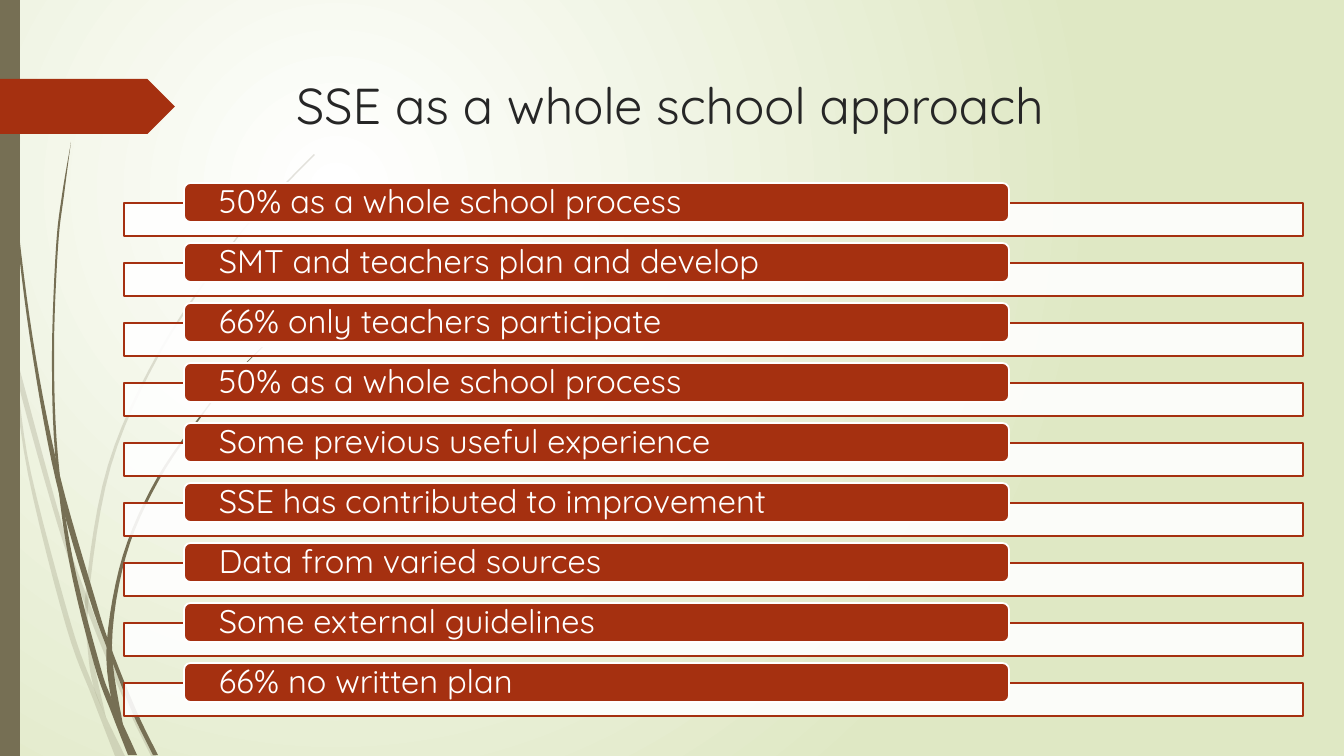
import pptx
import pptx.util
import pptx.dml.color
import pptx.enum.shapes
import pptx.enum.text
import pptx.oxml.ns
import lxml.etree

SCALE = 914400 / 100.8
WIDE, HIGH = 1344, 756
FONT = "Quicksand"
RED, BROWN, WHITE, DARK = "A53010", "766F54", "FFFFFF", "262626"
KIND = pptx.enum.shapes.MSO_SHAPE
ANCHOR = pptx.enum.text.MSO_ANCHOR
ALIGN = pptx.enum.text.PP_ALIGN

ITEMS = [
    "50% as a whole school process",
    "SMT and teachers plan and develop",
    "66% only teachers participate",
    "50% as a whole school process",
    "Some previous useful experience",
    "SSE has contributed to improvement",
    "Data from varied sources",
    "Some external guidelines",
    "66% no written plan",
]

PALE_STEMS = [
    ([(0, 284), (9, 325), (17, 379), (31, 473), (71, 624), (94, 688), (106, 717), (125, 756)],
     [(0, 301), (10, 347), (28, 474), (66, 626), (93, 699), (115, 756)]),
    ([(14, 348), (62, 524), (93, 612), (128, 698), (156, 756)],
     [(14, 348), (17, 379), (58, 526), (89, 615), (124, 700), (151, 756)]),
    ([(314, 154), (270, 199), (230, 246), (159, 351), (108, 465), (86, 589),
      (88, 651), (94, 688), (106, 717)],
     [(315, 155), (271, 200), (231, 247), (161, 352), (111, 466), (89, 595),
      (92, 651), (106, 717)]),
]

DARK_STEMS = [
    ([(4, 0), (5, 48), (8, 110), (19, 234), (36, 358), (60, 476), (94, 595),
      (110, 645), (137, 712), (158, 755)],
     [(3, 0), (4, 48), (7, 111), (17, 235), (33, 358), (56, 481), (89, 597),
      (112, 661), (133, 714), (153, 755)]),
    ([(71, 142), (62, 195), (56, 247), (52, 352), (55, 453), (69, 561),
      (94, 664), (112, 714), (128, 755)],
     [(71, 142), (64, 195), (58, 247), (54, 352), (58, 457), (73, 560),
      (99, 662), (111, 697), (137, 755)]),
    ([(262, 347), (233, 376), (206, 408), (157, 478), (123, 555), (107, 640),
      (111, 697), (123, 725)],
     [(263, 347), (233, 377), (207, 409), (159, 480), (126, 556), (112, 645),
      (123, 725)]),
]


def px(size):
    return pptx.util.Emu(round(size * SCALE))


def rgb(code):
    return pptx.dml.color.RGBColor.from_string(code)


def paint(shape, fill, line=None, alpha=100):
    shape.shadow.inherit = False
    shape.fill.solid()
    shape.fill.fore_color.rgb = rgb(fill)
    if alpha < 100:
        qn = pptx.oxml.ns.qn
        color = shape.element.spPr.find(qn("a:solidFill")).find(qn("a:srgbClr"))
        lxml.etree.SubElement(color, qn("a:alpha"), val=str(alpha * 1000))
    if line:
        shape.line.color.rgb = rgb(line)
        shape.line.width = pptx.util.Pt(1.25)
    else:
        shape.line.fill.background()


def add_box(slide, kind, area, fill, line=None, alpha=100):
    shape = slide.shapes.add_shape(kind, *map(px, area))
    paint(shape, fill, line, alpha)
    return shape


def write(shape, text, size, color):
    frame = shape.text_frame
    frame.text = text
    frame.word_wrap = True
    frame.auto_size = pptx.enum.text.MSO_AUTO_SIZE.NONE
    para = frame.paragraphs[0]
    para.alignment = ALIGN.LEFT
    para.font.name = FONT
    para.font.size = pptx.util.Pt(size)
    para.font.color.rgb = rgb(color)
    return frame


def smooth(knots, steps=6):
    ends = [knots[0], *knots, knots[-1]]
    curve = []
    for a, b, c, d in zip(ends, ends[1:], ends[2:], ends[3:]):
        for step in range(steps):
            t = step / steps
            curve.append(tuple(
                q + t * (r - p) / 2
                + t * t * (2 * p - 5 * q + 4 * r - s) / 2
                + t ** 3 * (3 * q - p - 3 * r + s) / 2
                for p, q, r, s in zip(a, b, c, d)))
    return curve + [knots[-1]]


def add_stem(slide, sides, alpha):
    near, far = map(smooth, sides)
    points = [(px(x), px(y)) for x, y in near + far[::-1]]
    path = slide.shapes.build_freeform(*points[0])
    path.add_line_segments(points[1:], close=True)
    paint(path.convert_to_shape(), BROWN, alpha=alpha)


def set_back(slide):
    fill = slide.background.fill
    fill.gradient()
    for stop, code in zip(fill.gradient_stops, (WHITE, "DFE8C4")):
        stop.color.rgb = rgb(code)
    qn = pptx.oxml.ns.qn
    grad = next(slide.element.iter(qn("a:gradFill")))
    grad.remove(grad.find(qn("a:lin")))
    glow = lxml.etree.SubElement(grad, qn("a:path"), path="circle")
    lxml.etree.SubElement(glow, qn("a:fillToRect"),
                          l="50000", t="50000", r="100000", b="100000")


def add_title(slide, text):
    title = slide.shapes.title
    title.left, title.top, title.width, title.height = map(px, (286, 69, 983, 141))
    frame = write(title, text, 36, DARK)
    frame.vertical_anchor = ANCHOR.TOP


def add_item(slide, top, text):
    add_box(slide, KIND.RECTANGLE, (124, top + 20, 1179, 33), WHITE, RED, 90)
    bar = add_box(slide, KIND.ROUNDED_RECTANGLE, (184, top, 825, 39), RED, WHITE)
    frame = write(bar, text, 23.3, WHITE)
    frame.vertical_anchor = ANCHOR.MIDDLE
    frame.margin_left = frame.margin_right = px(33)
    frame.margin_top = frame.margin_bottom = 0
    frame.paragraphs[0].line_spacing = 0.9


def main():
    deck = pptx.Presentation()
    deck.slide_width, deck.slide_height = px(WIDE), px(HIGH)
    slide = deck.slides.add_slide(deck.slide_layouts[5])
    set_back(slide)
    for stems, alpha in ((PALE_STEMS, 20), (DARK_STEMS, 100)):
        for sides in stems:
            add_stem(slide, sides, alpha)
    add_box(slide, KIND.RECTANGLE, (0, 0, 20, HIGH), BROWN)
    add_box(slide, KIND.PENTAGON, (0, 79, 175, 55), RED)
    add_title(slide, "SSE as a whole school approach")
    for row, text in enumerate(ITEMS):
        add_item(slide, 183 + 60 * row, text)
    deck.save("out.pptx")


if __name__ == "__main__":
    main()
